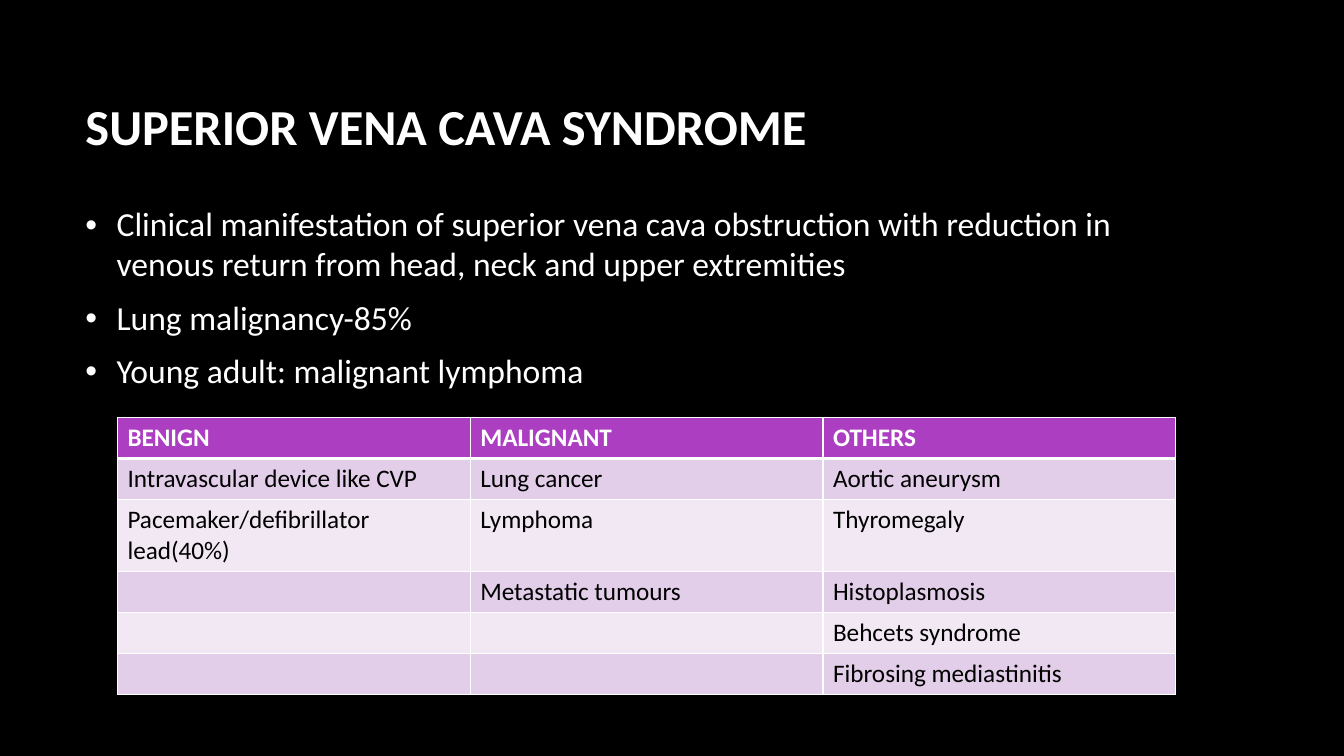
from dataclasses import dataclass

from lxml import etree
from pptx import Presentation
from pptx.dml.color import RGBColor
from pptx.enum import text as tx
from pptx.oxml import ns
from pptx.util import Cm, Pt


@dataclass(frozen=True)
class Theme:
    font: str = "Calibri"
    background: str = "000000"
    light: str = "FFFFFF"
    dark: str = "000000"
    header: str = "AC3EC1"
    bands: tuple = ("E3CEE9", "F1E8F4")
    title_size: float = 36
    body_size: float = 24
    table_size: float = 18


THEME = Theme()

FACTS = [
    "Clinical manifestation of superior vena cava obstruction with reduction in "
    "venous return from head, neck and upper extremities",
    "Lung malignancy-85%",
    "Young adult: malignant lymphoma",
]

CAUSES = [
    ("BENIGN", "MALIGNANT", "OTHERS"),
    ("Intravascular device like CVP", "Lung cancer", "Aortic aneurysm"),
    ("Pacemaker/defibrillator lead(40%)", "Lymphoma", "Thyromegaly"),
    ("", "Metastatic tumours", "Histoplasmosis"),
    ("", "", "Behcets syndrome"),
    ("", "", "Fibrosing mediastinitis"),
]
ROW_HEIGHTS = [1.03, 1.03, 1.83, 1.03, 1.03, 1.03]


def write(paragraph, words, size, color=THEME.light, bold=False):
    paragraph.alignment = tx.PP_ALIGN.LEFT
    if not words:
        return
    run = paragraph.add_run()
    run.text = words
    run.font.name = THEME.font
    run.font.size = Pt(size)
    run.font.bold = bold
    run.font.color.rgb = RGBColor.from_string(color)


def add_bullet(paragraph, indent):
    properties = paragraph._p.get_or_add_pPr()
    properties.set("marL", str(indent))
    properties.set("indent", str(-indent))
    font = etree.SubElement(properties, ns.qn("a:buFont"))
    font.set("typeface", "Arial")
    etree.SubElement(properties, ns.qn("a:buChar")).set("char", "•")


def add_title(slide, words):
    title = slide.shapes.title
    title.left, title.top, title.width, title.height = Cm(1.9), Cm(1.7), Cm(28.15), Cm(2.9)
    title.text_frame.vertical_anchor = tx.MSO_ANCHOR.MIDDLE
    write(title.text_frame.paragraphs[0], words, THEME.title_size, bold=True)


def add_facts(slide, facts):
    frame = slide.shapes.add_textbox(Cm(1.9), Cm(5.05), Cm(28.15), Cm(5.2)).text_frame
    frame.word_wrap = True
    for index, fact in enumerate(facts):
        paragraph = frame.paragraphs[0] if index == 0 else frame.add_paragraph()
        paragraph.line_spacing = 0.98
        paragraph.space_after = Pt(10)
        add_bullet(paragraph, Cm(0.79))
        write(paragraph, fact, THEME.body_size)


def set_borders(cell, bottom_width):
    properties = cell._tc.get_or_add_tcPr()
    widths = {"a:lnL": 1, "a:lnR": 1, "a:lnT": 1, "a:lnB": bottom_width}
    for position, (side, width) in enumerate(widths.items()):
        line = etree.Element(ns.qn(side), w=str(Pt(width)))
        fill = etree.SubElement(line, ns.qn("a:solidFill"))
        etree.SubElement(fill, ns.qn("a:srgbClr")).set("val", THEME.light)
        properties.insert(position, line)


def add_causes(slide, causes):
    table = slide.shapes.add_table(
        len(causes), len(causes[0]), Cm(2.96), Cm(10.52), Cm(26.67), Cm(sum(ROW_HEIGHTS))
    ).table
    for row, height in zip(table.rows, ROW_HEIGHTS):
        row.height = Cm(height)
    for row_index, causes_row in enumerate(causes):
        heading = row_index == 0
        fill = THEME.header if heading else THEME.bands[(row_index - 1) % 2]
        for column_index, cause in enumerate(causes_row):
            cell = table.cell(row_index, column_index)
            cell.fill.solid()
            cell.fill.fore_color.rgb = RGBColor.from_string(fill)
            set_borders(cell, 3 if heading else 1)
            write(cell.text_frame.paragraphs[0], cause, THEME.table_size,
                  color=THEME.light if heading else THEME.dark, bold=heading)


def main():
    deck = Presentation()
    deck.slide_width, deck.slide_height = Cm(33.87), Cm(19.05)
    slide = deck.slides.add_slide(deck.slide_layouts.get_by_name("Title Only"))
    slide.background.fill.solid()
    slide.background.fill.fore_color.rgb = RGBColor.from_string(THEME.background)
    add_title(slide, "SUPERIOR VENA CAVA SYNDROME")
    add_facts(slide, FACTS)
    add_causes(slide, CAUSES)
    deck.save("out.pptx")


if __name__ == "__main__":
    main()
